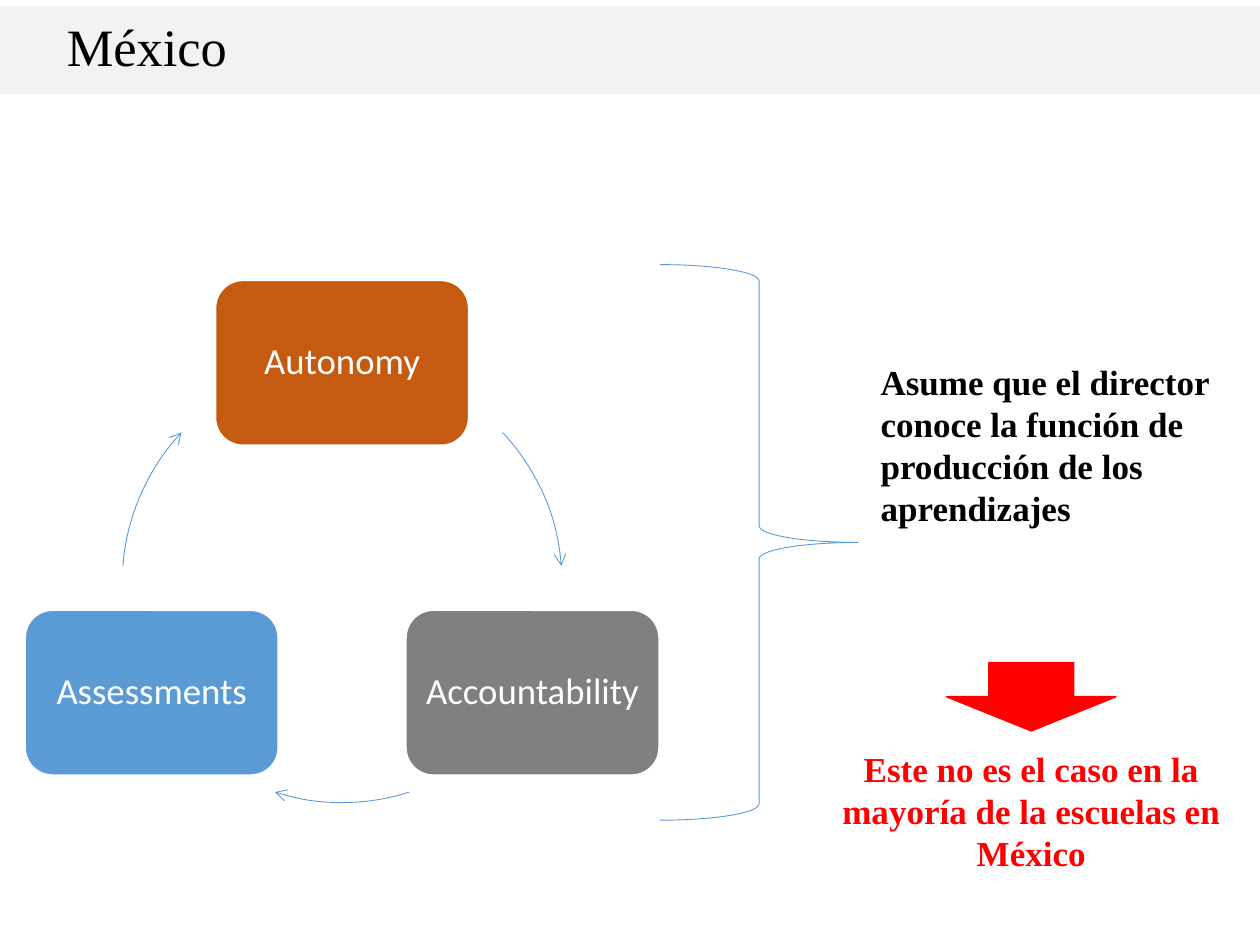
import math

import pptx
import pptx.dml.color
import pptx.enum.shapes
import pptx.enum.text
import pptx.util
from lxml import etree
from pptx.util import Inches

COLORS = {
    "band": "F2F2F2", "black": "000000", "white": "FFFFFF", "red": "FF0000",
    "blue": "5B9BD5", "orange": "C55A11", "gray": "808080",
}
SHAPE = pptx.enum.shapes.MSO_SHAPE
ALIGN = pptx.enum.text.PP_ALIGN
ANCHOR = pptx.enum.text.MSO_ANCHOR
SERIF = "Times New Roman"


def rgb(name):
    """Return the named palette colour."""
    return pptx.dml.color.RGBColor.from_string(COLORS[name])


def add_shape(s, kind, box, fill=None, line=None, width=1):
    """Add a preset shape with an optional fill and outline."""
    sp = s.shapes.add_shape(kind, *map(Inches, box))
    sp.shadow.inherit = False
    if fill:
        sp.fill.solid()
        sp.fill.fore_color.rgb = rgb(fill)
    else:
        sp.fill.background()
    if line:
        sp.line.color.rgb = rgb(line)
        sp.line.width = pptx.util.Pt(width)
    else:
        sp.line.fill.background()
    return sp


def write(sp, text, font, size, color, align=ALIGN.LEFT, anchor=ANCHOR.TOP, bold=False):
    """Write one formatted paragraph into a shape."""
    tf = sp.text_frame
    tf.word_wrap = True
    tf.auto_size = pptx.enum.text.MSO_AUTO_SIZE.NONE
    tf.vertical_anchor = anchor
    p = tf.paragraphs[0]
    p.text = text
    p.alignment = align
    p.font.name, p.font.size, p.font.bold = font, pptx.util.Pt(size), bold
    p.font.color.rgb = rgb(color)
    return p


def add_header(s, left, top, width, height):
    """Place the title on its full-width band."""
    band = add_shape(s, SHAPE.RECTANGLE, (left, top, width, height), "band")
    title = s.shapes.title
    title._element.addprevious(band._element)
    title.left, title.top = Inches(left + 0.43), Inches(top + 0.01)
    title.width, title.height = Inches(7.48), Inches(0.61)
    write(title, "México", SERIF, 30, "black")


def add_arc_arrow(s, box, start, end):
    """Draw a clockwise arc between two angles, with an arrowhead."""
    sp = add_shape(s, SHAPE.ARC, box, line="blue", width=0.5)
    sp.adjustments[0], sp.adjustments[1] = start * 0.6, end * 0.6
    ln = sp.line._get_or_add_ln()
    etree.SubElement(ln, pptx.oxml.ns.qn("a:tailEnd"), type="arrow")


def add_cycle(s, left, top, size):
    """Place three nodes evenly on a circle, joined by arc arrows."""
    node_w, node_h = 2.01, 1.31
    radius = size / 2
    nodes = [
        ("Autonomy", "orange", (316.9, 355.6)),
        ("Accountability", "gray", (72.2, 107.8)),
        ("Assessments", "blue", (184.4, 223.1)),
    ]
    for i, (label, color, arc) in enumerate(nodes):
        angle = math.radians(-90 + 120 * i)
        x = left + radius + radius * math.cos(angle) - node_w / 2
        y = top + radius + radius * math.sin(angle) - node_h / 2
        sp = add_shape(s, SHAPE.ROUNDED_RECTANGLE, (x, y, node_w, node_h), color, "white")
        tf = sp.text_frame
        tf.margin_left = tf.margin_right = Inches(0.09)
        tf.margin_top = tf.margin_bottom = Inches(0.09)
        p = write(sp, label, "Calibri", 21, "white", ALIGN.CENTER, ANCHOR.MIDDLE)
        p.line_spacing = 0.9
        add_arc_arrow(s, (left, top, size, size), *arc)


def add_conclusion(s, left, top, width, height):
    """Place the brace, the assumption, the down arrow and the finding."""
    right = left + width
    add_shape(s, SHAPE.RIGHT_BRACE, (left, top, 1.57, height), line="blue", width=0.5)
    note = s.shapes.add_textbox(*map(Inches, (right - 2.91, top + 0.71, 2.91, 1.45)))
    write(note, "Asume que el director conoce la función de producción de los aprendizajes",
          SERIF, 20, "black", bold=True)
    finding_w, arrow_w = 3.23, 1.34
    arrow_x = right - (finding_w + arrow_w) / 2
    add_shape(s, SHAPE.DOWN_ARROW, (arrow_x, top + 3.16, arrow_w, 0.54), "red", "red")
    finding = s.shapes.add_textbox(
        *map(Inches, (right - finding_w, top + 3.78, finding_w, 1.11)))
    write(finding, "Este no es el caso en la mayoría de la escuelas en México",
          SERIF, 20, "red", ALIGN.CENTER, bold=True)


def main():
    """Build and save the slide."""
    prs = pptx.Presentation()
    prs.slide_width, prs.slide_height = Inches(10), Inches(7.5)
    s = prs.slides.add_slide(prs.slide_layouts[5])
    add_header(s, 0, 0.05, 10, 0.7)
    add_conclusion(s, 5.24, 2.1, 4.56, 4.41)
    add_cycle(s, 0.97, 2.88, 3.49)
    prs.save("out.pptx")


if __name__ == "__main__":
    main()
